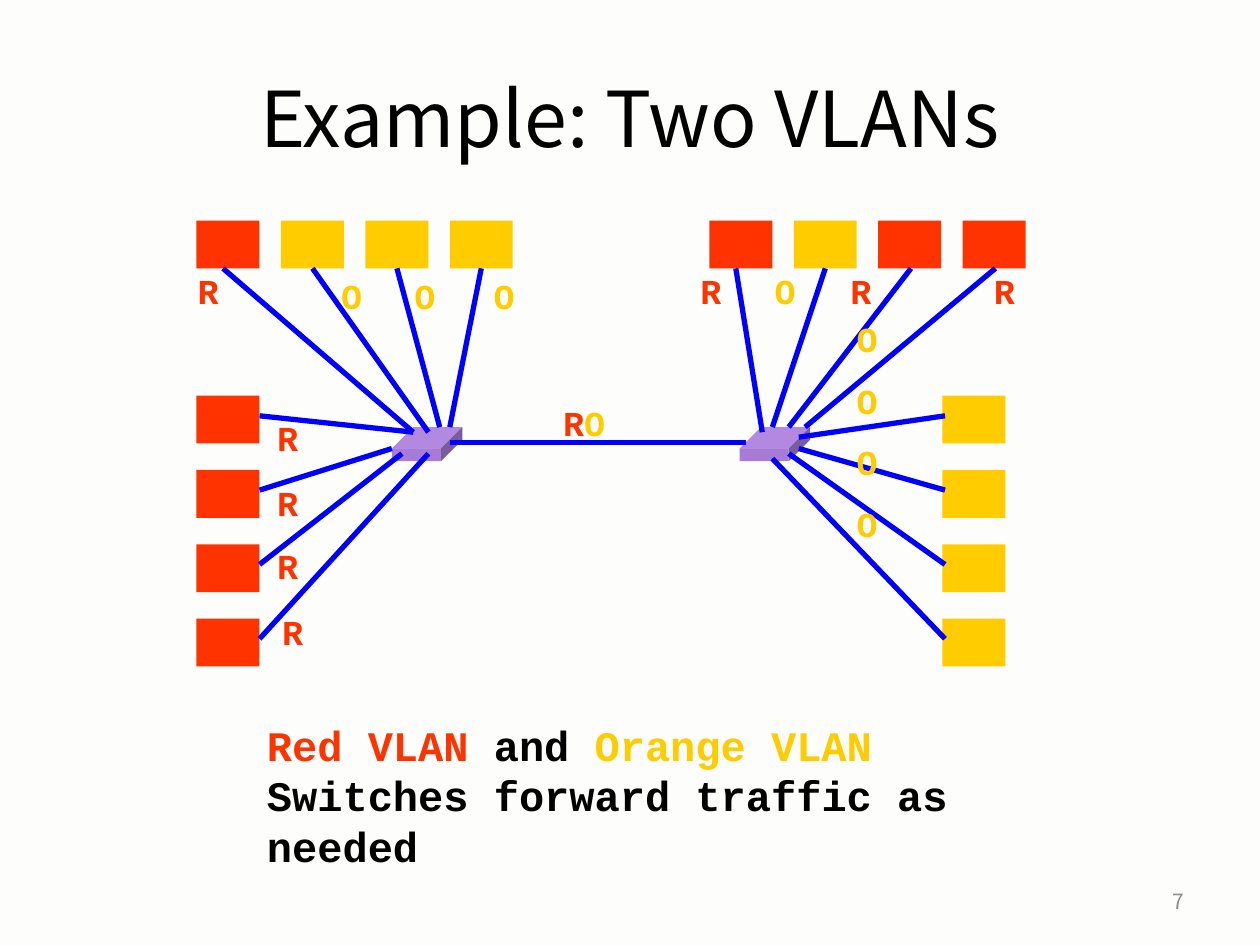
from dataclasses import dataclass

from lxml.etree import SubElement
from pptx import Presentation
from pptx.dml.color import RGBColor
from pptx.enum.shapes import MSO_CONNECTOR as Conn, MSO_SHAPE as Shape
from pptx.enum.text import MSO_ANCHOR as Anchor, PP_ALIGN as Align
from pptx.oxml.ns import qn
from pptx.util import Inches, Pt

RED, ORANGE, BLUE, BLACK = "FF3300", "FFCC00", "0000FF", "000000"
GREY, PAPER = "8C8C8C", "FDFDFB"
FRONT, TOP, SIDE = "A87CD6", "B388E0", "7A5C9E"
SANS, MONO = "Noto Sans CJK JP", "Courier New"
COLORS = {"R": RED, "O": ORANGE}
COL_STEP, ROW_STEP = 0.67, 0.59
HOST_TOP, ROW_TOP = 1.75, 3.14
HOST_W, HOST_H = 0.5, 0.38
SWITCH_TOP, SWITCH_W, SWITCH_H, SWITCH_DEPTH = 3.56, 0.39, 0.1, 0.17


@dataclass
class Site:
    switch_x: float
    col_x: float
    row_x: float
    port_x: float
    col_vlans: str
    row_vlans: str
    col_links: list
    row_ends: list
    labels: list


SITES = [
    Site(3.11, 1.56, 1.56, 2.06, "ROOO", "RRRR",
         [(1.77, 3.28, 3.43), (2.48, 3.4, 3.43), (3.15, 3.49, 3.39), (3.82, 3.57, 3.39)],
         [(3.28, 3.43), (3.11, 3.56), (3.19, 3.6), (3.4, 3.6)],
         [("R", 1.47, 2.09), ("O", 2.61, 2.13), ("O", 3.19, 2.13), ("O", 3.82, 2.13),
          ("R", 2.1, 3.26), ("R", 2.1, 3.77), ("R", 2.1, 4.27), ("R", 2.14, 4.8)]),
    Site(5.87, 5.63, 7.48, 7.5, "RORR", "OOOO",
         [(5.84, 6.05, 3.43), (6.55, 6.13, 3.39), (7.23, 6.26, 3.39), (7.9, 6.39, 3.39)],
         [(6.34, 3.47), (6.34, 3.56), (6.26, 3.6), (6.13, 3.64)],
         [("R", 5.46, 2.09), ("O", 6.05, 2.09), ("R", 6.65, 2.09), ("R", 7.79, 2.09),
          ("O", 6.7, 2.47), ("O", 6.7, 2.96), ("O", 6.7, 3.45), ("O", 6.7, 3.94)]),
]


def rgb(color: str) -> RGBColor:
    return RGBColor.from_string(color)


def paint(sp, color: str) -> None:
    sp.shadow.inherit = False
    sp.fill.solid()
    sp.fill.fore_color.rgb = rgb(color)
    sp.line.fill.background()


def add_rect(s, x: float, y: float, w: float, h: float, color: str) -> None:
    sp = s.shapes.add_shape(Shape.RECTANGLE, Inches(x), Inches(y), Inches(w), Inches(h))
    paint(sp, color)


def add_face(s, points: list, color: str) -> None:
    start, *rest = [(Inches(x), Inches(y)) for x, y in points]
    builder = s.shapes.build_freeform(*start)
    builder.add_line_segments(rest, close=True)
    paint(builder.convert_to_shape(), color)


def add_switch(s, x: float) -> None:
    y, d, right = SWITCH_TOP, SWITCH_DEPTH, x + SWITCH_W
    add_face(s, [(x, y), (x + d, y - d), (right + d, y - d), (right, y)], TOP)
    add_face(s, [(right, y), (right + d, y - d), (right + d, y - d + SWITCH_H),
                 (right, y + SWITCH_H)], SIDE)
    add_rect(s, x, y, SWITCH_W, SWITCH_H, FRONT)


def add_link(s, x1: float, y1: float, x2: float, y2: float) -> None:
    line = s.shapes.add_connector(Conn.STRAIGHT, Inches(x1), Inches(y1), Inches(x2), Inches(y2))
    line.line.color.rgb = rgb(BLUE)
    line.line.width = Pt(3)
    SubElement(line._element.spPr, qn("a:effectLst"))


def style(r, size: int, color: str, font: str, bold: bool = False) -> None:
    r.font.size = Pt(size)
    r.font.name = font
    r.font.bold = bold
    r.font.color.rgb = rgb(color)


def add_text(s, x: float, y: float, w: float, h: float, paragraphs: list,
             size: int, font: str = MONO, bold: bool = True, wrap: bool = True):
    tf = s.shapes.add_textbox(Inches(x), Inches(y), Inches(w), Inches(h)).text_frame
    tf.word_wrap = wrap
    for i, runs in enumerate(paragraphs):
        p = tf.add_paragraph() if i else tf.paragraphs[0]
        for text, color in runs:
            r = p.add_run()
            r.text = text
            style(r, size, color, font, bold)
    return tf


def add_label(s, letters: str, x: float, y: float) -> None:
    runs = [(letter, COLORS[letter]) for letter in letters]
    add_text(s, x, y, 0.2 + 0.21 * len(letters), 0.43, [runs], 20, wrap=False)


def add_site(s, site: Site) -> None:
    for i, vlan in enumerate(site.col_vlans):
        add_rect(s, site.col_x + i * COL_STEP, HOST_TOP, HOST_W, HOST_H, COLORS[vlan])
    for i, vlan in enumerate(site.row_vlans):
        add_rect(s, site.row_x, ROW_TOP + i * ROW_STEP, HOST_W, HOST_H, COLORS[vlan])
    for x1, x2, y2 in site.col_links:
        add_link(s, x1, HOST_TOP + HOST_H, x2, y2)
    for i, (x, y) in enumerate(site.row_ends):
        add_link(s, site.port_x, ROW_TOP + 0.16 + i * ROW_STEP, x, y)


def main() -> None:
    prs = Presentation()
    prs.slide_width, prs.slide_height = Inches(10), Inches(7.5)
    s = prs.slides.add_slide(prs.slide_layouts[5])
    s.background.fill.solid()
    s.background.fill.fore_color.rgb = rgb(PAPER)

    title = s.shapes.title
    title.left, title.top = Inches(0.5), Inches(0.3)
    title.width, title.height = Inches(9), Inches(1.25)
    tf = title.text_frame
    tf.text = "Example: Two VLANs"
    tf.vertical_anchor = Anchor.MIDDLE
    p = tf.paragraphs[0]
    p.alignment = Align.CENTER
    style(p.runs[0], 44, BLACK, SANS)

    number = add_text(s, 7.17, 6.95, 2.33, 0.4, [[("7", GREY)]], 12, SANS, bold=False)
    number.vertical_anchor = Anchor.MIDDLE
    number.paragraphs[0].alignment = Align.RIGHT

    for site in SITES:
        add_switch(s, site.switch_x)
    add_link(s, 3.57, 3.51, 5.92, 3.51)
    for site in SITES:
        add_site(s, site)

    caption = [[("Red VLAN", RED), (" and ", BLACK), ("Orange VLAN", ORANGE)],
               [("Switches forward traffic as needed", BLACK)]]
    add_text(s, 2.02, 5.66, 5.72, 0.9, caption, 24)
    add_label(s, "RO", 4.37, 3.14)
    for site in SITES:
        for label in site.labels:
            add_label(s, *label)

    prs.save("out.pptx")


if __name__ == "__main__":
    main()
